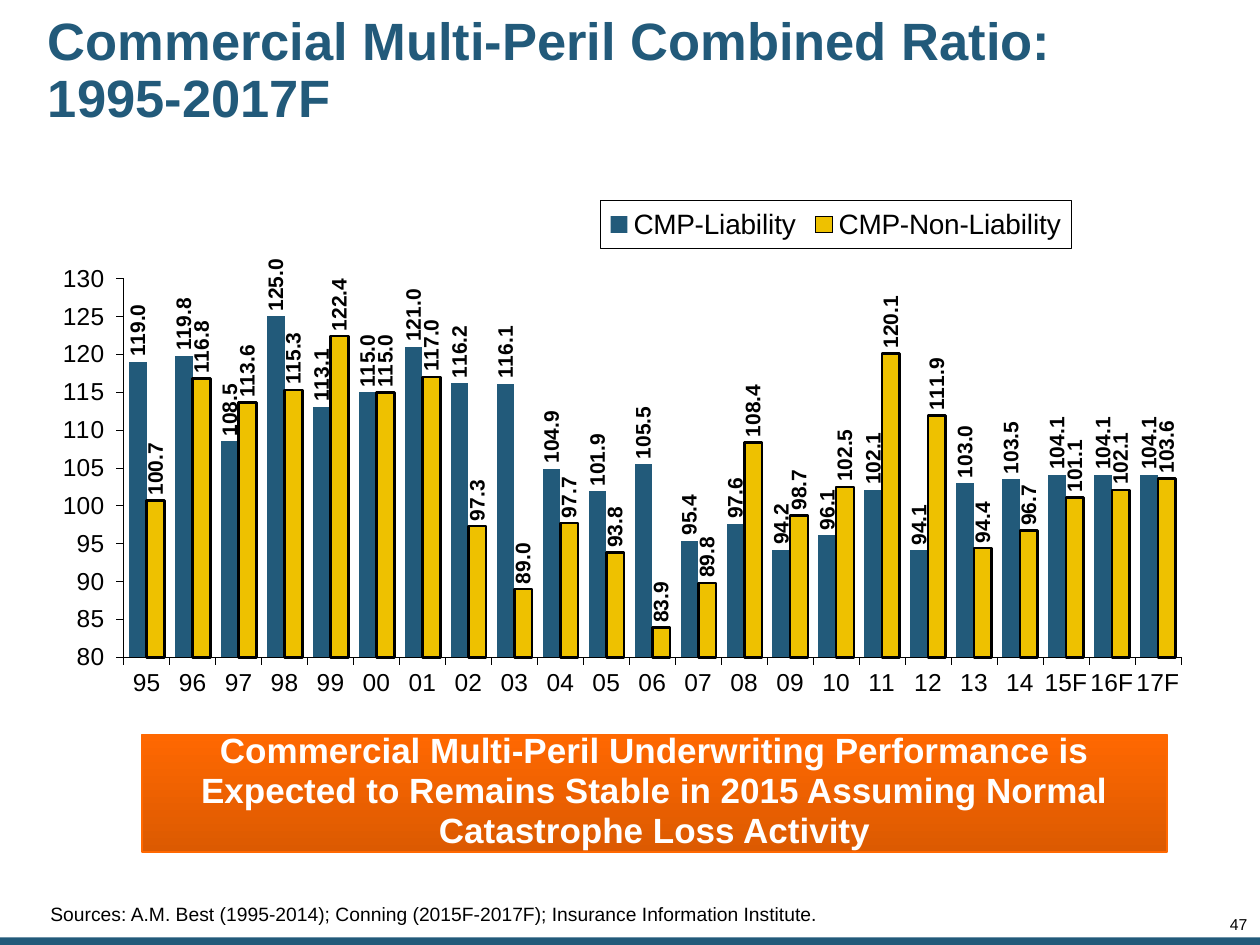
"""Build the slide on the commercial multi-peril combined ratio, 1995-2017F."""
from lxml import etree
from pptx import Presentation
from pptx import util as u
from pptx.chart import data
from pptx.dml import color
from pptx.enum import chart as ch, shapes, text
from pptx.oxml import ns

HUE = {name: color.RGBColor.from_string(code) for name, code in {
    "blue": "225A7A", "gold": "EEC100", "black": "000000", "white": "FFFFFF",
    "light": "FF6801", "dark": "DC5A01"}.items()}

deck = Presentation()
deck.slide_width, deck.slide_height = u.Inches(10), u.Inches(7.5)
slide = deck.slides.add_slide(deck.slide_layouts[6])
cell = deck.slide_width / 100


def write(words, spot=None, shape=None, size=11, hue="black", bold=False,
          align="LEFT", anchor="TOP", gap=0.9, pad=(0, 0, 0, 0)):
    shape = shape or slide.shapes.add_textbox(*[int(cell * n) for n in spot])
    frame = shape.text_frame
    frame.word_wrap = True
    frame.vertical_anchor = text.MSO_ANCHOR[anchor]
    (frame.margin_left, frame.margin_top,
     frame.margin_right, frame.margin_bottom) = [int(cell * n) for n in pad]
    line = frame.paragraphs[0]
    line.text, line.line_spacing = words, gap
    line.alignment = text.PP_ALIGN[align]
    font = line.runs[0].font
    font.name, font.size, font.bold = "Arial", u.Pt(size), bold
    font.color.rgb = HUE[hue]


def place(part, index, share, inner=False):
    for old in part.findall(ns.qn("c:layout")):
        part.remove(old)
    node = etree.Element(ns.qn("c:layout"))
    part.insert(index, node)
    node = etree.SubElement(node, ns.qn("c:manualLayout"))
    pairs = [("layoutTarget", "inner")] if inner else []
    pairs += [("xMode", "edge"), ("yMode", "edge"), *zip("xywh", share)]
    for tag, val in pairs:
        etree.SubElement(node, ns.qn("c:" + tag)).set("val", str(val))


bar = slide.shapes.add_shape(shapes.MSO_SHAPE.RECTANGLE, 0, int(cell * 74.4),
                             deck.slide_width, int(cell * 0.6))
bar.shadow.inherit = False
bar.fill.solid()
bar.fill.fore_color.rgb = HUE["blue"]
bar.line.fill.background()

write("Commercial Multi-Peril Combined Ratio: 1995-2017F", (3.3, 1, 80.9, 9.4),
      size=30, hue="blue", bold=True, anchor="MIDDLE", pad=(0.5,) * 4)

years = [f"{n % 100:02}" + "F" * (n > 2014) for n in range(1995, 2018)]
rows = {
    "CMP-Liability": (
        "blue", r"#,##0.0_);[Red]\(#,##0.0\)",
        [119, 119.8, 108.5, 125, 113.1, 115, 121, 116.2, 116.1, 104.9, 101.9, 105.5,
         95.4, 97.6, 94.2, 96.1, 102.1, 94.1, 103, 103.5, 104.1, 104.1, 104.1]),
    "CMP-Non-Liability": (
        "gold", "0.0",
        [100.7, 116.8, 113.6, 115.3, 122.4, 115, 117, 97.3, 89, 97.7, 93.8, 83.9,
         89.8, 108.4, 98.7, 102.5, 120.1, 111.9, 94.4, 96.7, 101.1, 102.1, 103.6])}
table = data.CategoryChartData()
table.categories = years
for name, (hue, form, vals) in rows.items():
    table.add_series(name, vals)
chart = slide.shapes.add_chart(
    ch.XL_CHART_TYPE.COLUMN_CLUSTERED,
    *[int(cell * n) for n in (3.8, 15.1, 91.3, 41.8)], table).chart
chart.has_title = False
chart.font.name, chart.font.size = "Arial", u.Pt(14)
chart.font.color.rgb = HUE["black"]
plot = chart.plots[0]
plot.gap_width, plot.overlap, plot.vary_by_categories = 60, 0, False

for run, (hue, form, vals) in zip(plot.series, rows.values()):
    run.invert_if_negative = False
    run.format.fill.solid()
    run.format.fill.fore_color.rgb = HUE[hue]
    if hue == "gold":
        run.format.line.color.rgb = HUE["black"]
        run.format.line.width = u.Pt(1.5)
    else:
        run.format.line.fill.background()
    tags = run.data_labels
    tags.show_value = True
    tags.position = ch.XL_LABEL_POSITION.OUTSIDE_END
    tags.number_format, tags.number_format_is_linked = form, False
    tags.font.name, tags.font.size, tags.font.bold = "Arial", u.Pt(12), True
    tags.font.color.rgb = HUE["black"]
    turn = tags._element.find(".//" + ns.qn("a:bodyPr"))
    turn.set("rot", "-5400000")
    turn.set("vert", "horz")

for axis in (chart.category_axis, chart.value_axis):
    axis.has_major_gridlines = False
    axis.major_tick_mark = ch.XL_TICK_MARK.OUTSIDE
    axis.minor_tick_mark = ch.XL_TICK_MARK.NONE
    axis.format.line.color.rgb = HUE["black"]
    axis.format.line.width = u.Pt(0.38)
    axis.tick_labels.font.name, axis.tick_labels.font.size = "Arial", u.Pt(14)
    axis.tick_labels.font.color.rgb = HUE["black"]
axis.minimum_scale, axis.maximum_scale, axis.major_unit = 80, 130, 5
axis.tick_labels.number_format = r"#,##0_);[Red]\(#,##0\)"
axis.tick_labels.number_format_is_linked = False

chart.has_legend = True
key = chart.legend
key.position, key.include_in_layout = ch.XL_LEGEND_POSITION.TOP, False
key.font.name, key.font.size = "Arial", u.Pt(16)
key.font.color.rgb = HUE["black"]
look = etree.Element(ns.qn("c:spPr"))
edge = etree.SubElement(look, ns.qn("a:ln"), w=str(u.Pt(0.5)))
fill = etree.SubElement(edge, ns.qn("a:solidFill"))
etree.SubElement(fill, ns.qn("a:srgbClr"), val=str(HUE["black"]))
key._element.find(ns.qn("c:txPr")).addprevious(look)
place(key._element, 1, (0.48, 0.02, 0.41, 0.09))
place(chart._chartSpace.find(".//" + ns.qn("c:plotArea")), 0,
      (0.066, 0.168, 0.919, 0.719), inner=True)

note = slide.shapes.add_shape(shapes.MSO_SHAPE.RECTANGLE,
                              *[int(cell * n) for n in (11.3, 58.3, 81.3, 9.3)])
note.shadow.inherit = False
note.fill.gradient()
note.fill.gradient_angle = 270
for stop, hue, mark in zip(note.fill.gradient_stops, ("light", "dark"), (0, 1)):
    stop.color.rgb, stop.position = HUE[hue], mark
note.line.color.rgb, note.line.width = HUE["light"], u.Pt(1)
write("Commercial Multi-Peril Underwriting Performance is Expected to Remains "
      "Stable in 2015 Assuming Normal Catastrophe Loss Activity", shape=note,
      size=20, hue="white", bold=True, align="CENTER", anchor="MIDDLE", gap=0.95,
      pad=(1, 0.5, 1, 0.7))

write("Sources: A.M. Best (1995-2014); Conning (2015F-2017F); Insurance "
      "Information Institute.", (0, 70.2, 93.5, 4.8), anchor="BOTTOM",
      pad=(4, 0, 0, 1.5))
write("47", (94.1, 72.8, 4.9, 1.3), size=9, align="RIGHT", gap=0.85)

deck.save("out.pptx")
